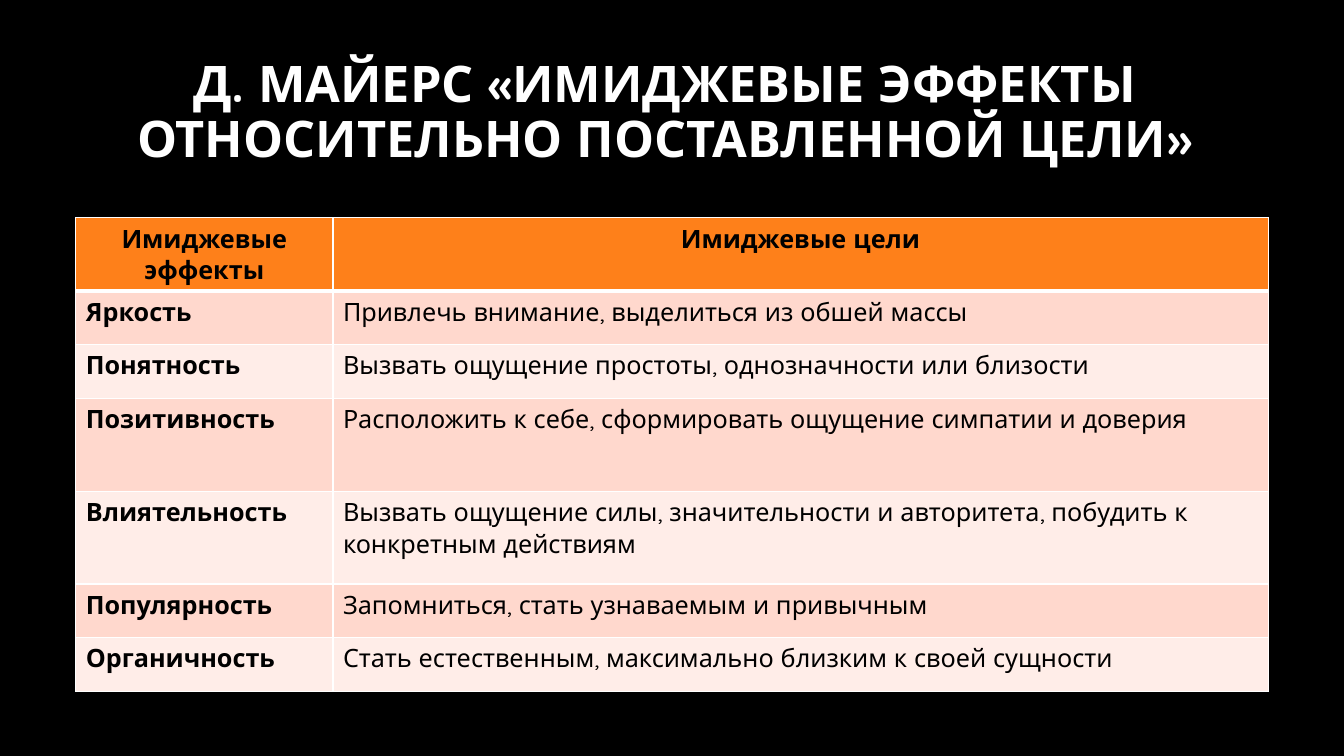
from lxml.etree import SubElement
from pptx import Presentation
from pptx.dml.color import RGBColor
from pptx.enum.text import MSO_ANCHOR, MSO_AUTO_SIZE, PP_ALIGN
from pptx.oxml.ns import qn
from pptx.util import Cm, Pt

FONT = "Quicksand"
WHITE, BLACK = "FFFFFF", "000000"
HEADER_FILL = "FE801A"
BAND_FILLS = ["FFEDE8", "FFD8CD"]

TITLE = "Д. МАЙЕРС «ИМИДЖЕВЫЕ ЭФФЕКТЫ ОТНОСИТЕЛЬНО ПОСТАВЛЕННОЙ ЦЕЛИ»"
COL_WIDTHS = [6.48, 23.57]
ROW, TALL_ROW = 1.35, 2.34
ROWS = [
    (ROW, "Имиджевые эффекты", "Имиджевые цели"),
    (ROW, "Яркость", "Привлечь внимание, выделиться из обшей массы"),
    (ROW, "Понятность", "Вызвать ощущение простоты, однозначности или близости"),
    (TALL_ROW, "Позитивность",
     "Расположить к себе, сформировать ощущение симпатии и доверия"),
    (TALL_ROW, "Влиятельность",
     "Вызвать ощущение силы, значительности и авторитета, побудить к конкретным действиям"),
    (ROW, "Популярность", "Запомниться, стать узнаваемым и привычным"),
    (ROW, "Органичность", "Стать естественным, максимально близким к своей сущности"),
]


def rgb(value):
    return RGBColor.from_string(value)


def add_run(p, text, size, color, bold):
    r = p.add_run()
    r.text = text
    r.font.name = FONT
    r.font.size = Pt(size)
    r.font.bold = bold
    r.font.color.rgb = rgb(color)


prs = Presentation()
prs.slide_width, prs.slide_height = Cm(33.87), Cm(19.05)
s = prs.slides.add_slide(prs.slide_layouts[5])
s.background.fill.solid()
s.background.fill.fore_color.rgb = rgb(BLACK)

# Title
title = s.shapes.title
title.left, title.top, title.width, title.height = Cm(1.55), Cm(2.13), Cm(30.4), Cm(1.47)
tf = title.text_frame
tf.word_wrap = True
tf.auto_size = MSO_AUTO_SIZE.NONE
tf.vertical_anchor = MSO_ANCHOR.MIDDLE
p = tf.paragraphs[0]
p.alignment = PP_ALIGN.CENTER
p.line_spacing = 0.9
add_run(p, TITLE, 36, WHITE, True)

# Table of effects and goals
table = s.shapes.add_table(
    len(ROWS), len(COL_WIDTHS), Cm(1.91), Cm(5.49),
    Cm(sum(COL_WIDTHS)), Cm(sum(row[0] for row in ROWS))).table
for column, width in zip(table.columns, COL_WIDTHS):
    column.width = Cm(width)

for i, (height, *texts) in enumerate(ROWS):
    table.rows[i].height = Cm(height)
    header = i == 0
    # The rule between the header and the first effect is thicker
    borders = {"a:lnL": 1, "a:lnR": 1, "a:lnT": 3 if i == 1 else 1, "a:lnB": 3 if header else 1}
    for j, text in enumerate(texts):
        cell = table.cell(i, j)
        tc_pr = cell._tc.get_or_add_tcPr()
        for tag, width in borders.items():
            ln = SubElement(tc_pr, qn(tag), w=str(Pt(width)))
            SubElement(SubElement(ln, qn("a:solidFill")), qn("a:srgbClr"), val=WHITE)
        cell.fill.solid()
        cell.fill.fore_color.rgb = rgb(HEADER_FILL if header else BAND_FILLS[i % 2])
        p = cell.text_frame.paragraphs[0]
        p.alignment = PP_ALIGN.CENTER if header else PP_ALIGN.LEFT
        add_run(p, text, 18, BLACK, header or j == 0)

prs.save("out.pptx")
